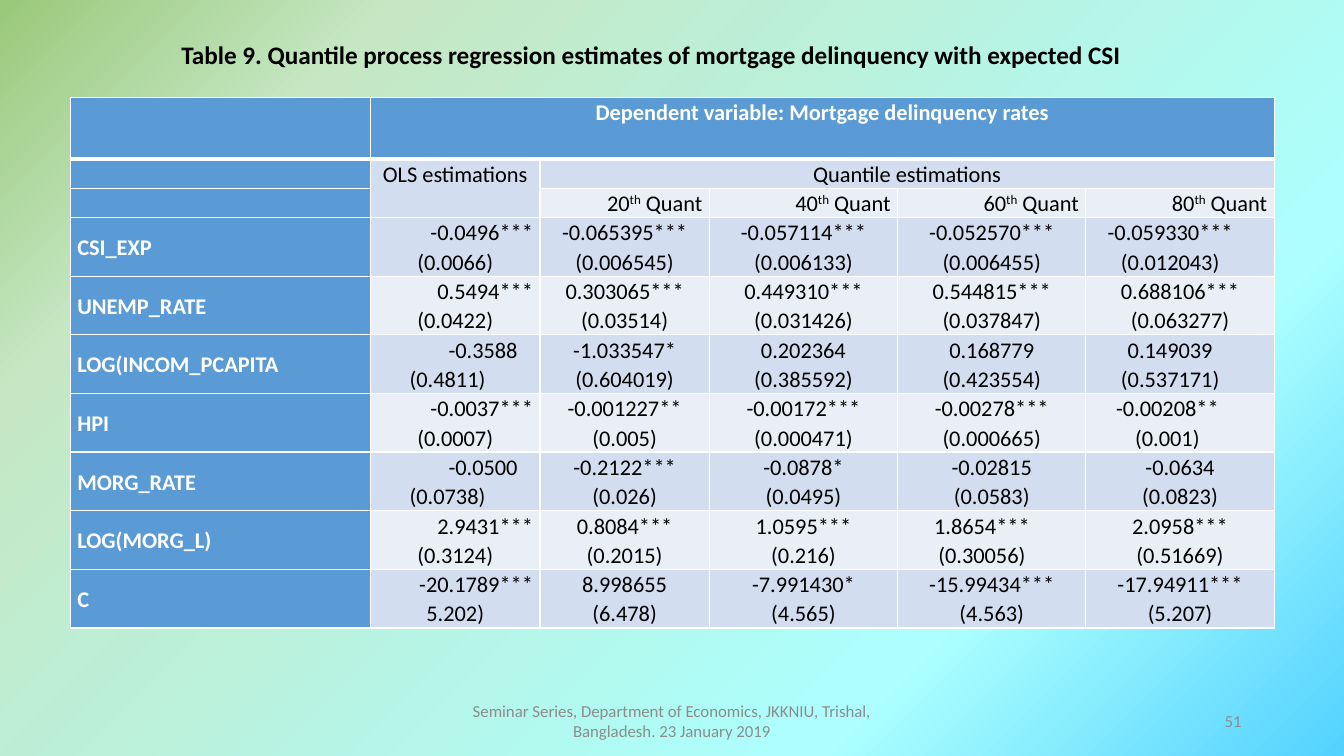
import pptx
import pptx.util
import pptx.dml.color
import pptx.enum.text
import pptx.oxml
import pptx.oxml.ns
from lxml import etree

Pt = pptx.util.Pt
ALIGN = pptx.enum.text.PP_ALIGN
ANCHOR = pptx.enum.text.MSO_ANCHOR
COLORS = {
    "header": "5B9BD5", "band": "D2DEEF", "light": "EAEFF7",
    "white": "FFFFFF", "black": "000000", "grey": "8C8C8C",
}
BACKGROUND = [(0, "53D2FF"), (25, "ACFFFE"), (81, "C5E7C3"), (100, "9AC87A"), (100, "CEE1F2")]
COL_WIDTHS = [214.5, 121, 121, 134.5, 134.5, 134.5]
ROW_HEIGHTS = [44, 21, 21] + [41.8] * 7
QUANTILES = [20, 40, 60, 80]
ESTIMATES = [
    ("CSI_EXP", "-0.0496*** (0.0066)", "-0.065395*** (0.006545)", "-0.057114*** (0.006133)",
     "-0.052570*** (0.006455)", "-0.059330*** (0.012043)"),
    ("UNEMP_RATE", "0.5494*** (0.0422)", "0.303065*** (0.03514)", "0.449310*** (0.031426)",
     "0.544815*** (0.037847)", "0.688106*** (0.063277)"),
    ("LOG(INCOM_PCAPITA", "-0.3588 (0.4811)", "-1.033547* (0.604019)", "0.202364 (0.385592)",
     "0.168779 (0.423554)", "0.149039 (0.537171)"),
    ("HPI", "-0.0037*** (0.0007)", "-0.001227** (0.005)", "-0.00172*** (0.000471)",
     "-0.00278*** (0.000665)", "-0.00208** (0.001)"),
    ("MORG_RATE", "-0.0500 (0.0738)", "-0.2122*** (0.026)", "-0.0878* (0.0495)",
     "-0.02815 (0.0583)", "-0.0634 (0.0823)"),
    ("LOG(MORG_L)", "2.9431*** (0.3124)", "0.8084*** (0.2015)", "1.0595*** (0.216)",
     "1.8654*** (0.30056)", "2.0958*** (0.51669)"),
    ("C", "-20.1789*** 5.202)", "8.998655 (6.478)", "-7.991430* (4.565)",
     "-15.99434*** (4.563)", "-17.94911*** (5.207)"),
]
EXTRA_RIGHT = {(5, 1): 11, (7, 1): 11, (3, 5): 14, (5, 5): 14, (6, 5): 18, (8, 4): 14}


def rgb(name):
    return pptx.dml.color.RGBColor.from_string(COLORS[name])


def write(tf, text, size=16, color="black", bold=False, aligns=(ALIGN.LEFT,),
          spacing=None, after=0, font="Calibri"):
    for i, line in enumerate(text.split("\n")):
        p = tf.paragraphs[0] if i == 0 else tf.add_paragraph()
        p.alignment = aligns[min(i, len(aligns) - 1)]
        p.space_before, p.space_after = Pt(0), Pt(after)
        if spacing:
            p.line_spacing = spacing
        if not line:
            p._p.get_or_add_endParaRPr().set("sz", str(size * 100))
        for j, part in enumerate(line.split("^")):
            if part:
                r = p.add_run()
                r.text = part
                r.font.size, r.font.bold, r.font.name = Pt(size), bold, font
                r.font.color.rgb = rgb(color)
                if j % 2:
                    r._r.get_or_add_rPr().set("baseline", "30000")


class Deck:
    def __init__(self):
        self.prs = pptx.Presentation()
        self.prs.slide_width, self.prs.slide_height = Pt(960), Pt(540)
        self.s = self.prs.slides.add_slide(self.prs.slide_layouts[5])

    def background(self, stops):
        fill = self.s.background.fill
        fill.gradient()
        grad = self.s._element.find(".//" + pptx.oxml.ns.qn("p:bgPr"))[0]
        gs = "".join(f'<a:gs pos="{pos * 1000}"><a:srgbClr val="{c}"/></a:gs>' for pos, c in stops)
        new = pptx.oxml.parse_xml(
            f'<a:gradFill {pptx.oxml.ns.nsdecls("a")} rotWithShape="1"><a:gsLst>{gs}</a:gsLst>'
            '<a:path path="circle"><a:fillToRect l="100000" t="100000"/></a:path>'
            '<a:tileRect r="-100000" b="-100000"/></a:gradFill>')
        grad.getparent().replace(grad, new)

    def title(self, text, x, y, w, h):
        sp = self.s.shapes.title
        sp.left, sp.top, sp.width, sp.height = Pt(x), Pt(y), Pt(w), Pt(h)
        tf = sp.text_frame
        tf.auto_size = pptx.enum.text.MSO_AUTO_SIZE.NONE
        tf.vertical_anchor = ANCHOR.TOP
        write(tf, text, size=18, bold=True, spacing=1.07, after=8)

    def text(self, text, x, y, w, h, align):
        tf = self.s.shapes.add_textbox(Pt(x), Pt(y), Pt(w), Pt(h)).text_frame
        tf.word_wrap = True
        tf.vertical_anchor = ANCHOR.MIDDLE
        write(tf, text, size=12, color="grey", aligns=(align,))

    def table(self, x, y, widths, heights):
        tbl = self.s.shapes.add_table(len(heights), len(widths), Pt(x), Pt(y),
                                      Pt(sum(widths)), Pt(sum(heights))).table
        tbl.horz_banding = False
        for col, w in zip(tbl.columns, widths):
            col.width = Pt(w)
        for row, h in zip(tbl.rows, heights):
            row.height = Pt(h)
        for i in range(len(heights)):
            for j in range(len(widths)):
                self.style_cell(tbl.cell(i, j), i, j)
        return tbl

    def style_cell(self, cell, i, j):
        tcPr = cell._tc.get_or_add_tcPr()
        for side in "LRTB":
            heavy = (i, side) in ((0, "B"), (1, "T"))
            ln = etree.SubElement(tcPr, pptx.oxml.ns.qn("a:ln" + side), w=str(Pt(3 if heavy else 1)))
            solid = etree.SubElement(ln, pptx.oxml.ns.qn("a:solidFill"))
            etree.SubElement(solid, pptx.oxml.ns.qn("a:srgbClr"), val=COLORS["white"])
        cell.fill.solid()
        cell.fill.fore_color.rgb = rgb("header" if i == 0 or j == 0 else "band" if i % 2 else "light")
        cell.margin_left = Pt(5)
        cell.margin_right = Pt(5 + EXTRA_RIGHT.get((i, j), 0))
        cell.margin_top = cell.margin_bottom = 0
        cell.vertical_anchor = ANCHOR.MIDDLE if i > 2 else ANCHOR.TOP

    def cell(self, tbl, i, j, text, **fmt):
        write(tbl.cell(i, j).text_frame, text, spacing=1.07, **fmt)


def main():
    d = Deck()
    d.background(BACKGROUND)
    d.title("Table 9. Quantile process regression estimates of mortgage delinquency with expected CSI",
            122.4, 23, 715.7, 31)
    tbl = d.table(50.2, 69.5, COL_WIDTHS, ROW_HEIGHTS)
    for first, last in (((0, 1), (0, 5)), ((1, 1), (2, 1)), ((1, 2), (1, 5))):
        tbl.cell(*first).merge(tbl.cell(*last))
    for i in range(3):
        d.cell(tbl, i, 0, "")
    center = (ALIGN.CENTER,)
    d.cell(tbl, 0, 1, "Dependent variable: Mortgage delinquency rates",
           color="white", bold=True, aligns=center)
    d.cell(tbl, 1, 1, "OLS estimations", aligns=center)
    d.cell(tbl, 1, 2, "Quantile estimations", aligns=center)
    for j, q in enumerate(QUANTILES, 2):
        d.cell(tbl, 2, j, f"{q}^th^ Quant", aligns=(ALIGN.RIGHT,))
    for i, (name, *values) in enumerate(ESTIMATES, 3):
        d.cell(tbl, i, 0, name, color="white", bold=True)
        for j, value in enumerate(values, 1):
            aligns = (ALIGN.RIGHT, ALIGN.CENTER) if j == 1 else center
            d.cell(tbl, i, j, value.replace(" ", "\n"), aligns=aligns)
    d.text("Seminar Series, Department of Economics, JKKNIU, Trishal, Bangladesh. 23 January 2019",
           318, 500.5, 324, 28.75, ALIGN.CENTER)
    d.text("51", 678, 500.5, 216, 28.75, ALIGN.RIGHT)
    d.prs.save("out.pptx")


if __name__ == "__main__":
    main()
